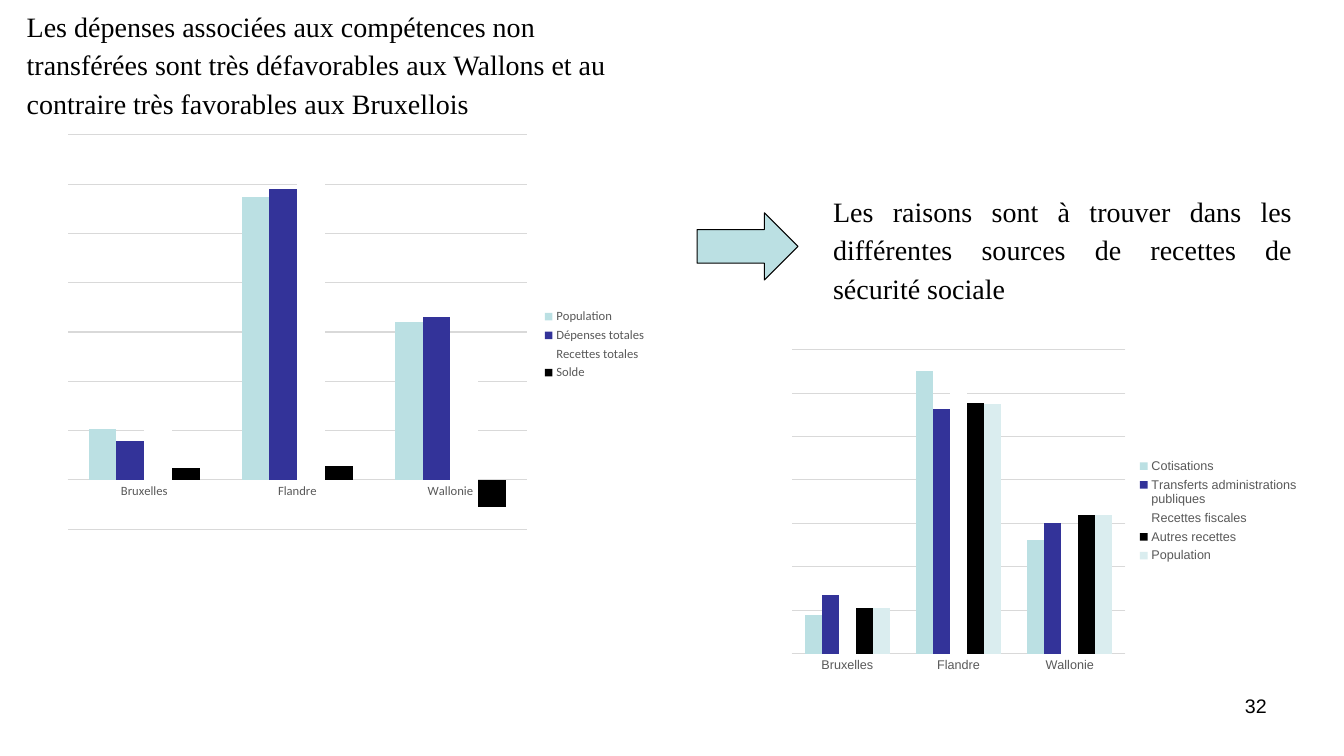
import lxml.etree
import pptx
import pptx.chart.data
import pptx.dml.color
import pptx.enum.chart
import pptx.enum.shapes
import pptx.enum.text
import pptx.oxml
import pptx.oxml.ns
import pptx.util

Pt = pptx.util.Pt
Align = pptx.enum.text.PP_ALIGN

BLACK = "000000"
WHITE = "FFFFFF"
PALE_TEAL = "BBE0E3"
INDIGO = "333399"
LIGHT_TEAL = "DAEDEF"
GRID_GREY = "D9D9D9"
LABEL_GREY = "595959"

REGIONS = ["Bruxelles", "Flandre", "Wallonie"]
BALANCE_SERIES = [
    ("Population", (0.104, 0.574, 0.32), PALE_TEAL),
    ("Dépenses totales", (0.079, 0.591, 0.33), INDIGO),
    ("Recettes totales", (0.103, 0.62, 0.275), WHITE),
    ("Solde", (0.024, 0.029, -0.055), BLACK),
]
REVENUE_SERIES = [
    ("Cotisations", (0.088, 0.65, 0.262), PALE_TEAL),
    ("Transferts administrations publiques", (0.135, 0.564, 0.301), INDIGO),
    ("Recettes fiscales", (0.104, 0.618, 0.274), WHITE),
    ("Autres recettes", (0.105, 0.576, 0.319), BLACK),
    ("Population", (0.104, 0.574, 0.32), LIGHT_TEAL),
]


def color(hex_string):
    return pptx.dml.color.RGBColor.from_string(hex_string)


def style_font(font, name, size, hex_string):
    font.name = name
    font.size = Pt(size)
    font.color.rgb = color(hex_string)


def style_line(line, hex_string):
    line.color.rgb = color(hex_string)
    line.width = Pt(0.75)


def add_text(slide, box, text, font_name, size, alignment):
    shape = slide.shapes.add_textbox(*map(Pt, box))
    shape.text_frame.word_wrap = True
    shape.text_frame.text = text
    paragraph = shape.text_frame.paragraphs[0]
    paragraph.alignment = alignment
    style_font(paragraph.runs[0].font, font_name, size, BLACK)
    return shape


def add_statement(slide, box, text, alignment=Align.LEFT):
    shape = add_text(slide, box, text, "Times New Roman", 20, alignment)
    shape.text_frame.auto_size = pptx.enum.text.MSO_AUTO_SIZE.SHAPE_TO_FIT_TEXT
    paragraph = shape.text_frame.paragraphs[0]
    paragraph.line_spacing = 1.14
    paragraph.space_after = Pt(6)


def add_arrow(slide, box):
    shape = slide.shapes.add_shape(
        pptx.enum.shapes.MSO_SHAPE.RIGHT_ARROW, *map(Pt, box))
    shape.shadow.inherit = False
    shape.fill.solid()
    shape.fill.fore_color.rgb = color(PALE_TEAL)
    style_line(shape.line, BLACK)


def set_plot_area(chart, x, y, width, height):
    """Fix the inner plot area, in fractions of the chart frame."""
    plot_area = chart.plots[0]._element.getparent()
    for layout in plot_area.findall(pptx.oxml.ns.qn("c:layout")):
        plot_area.remove(layout)
    settings = [("layoutTarget", "inner"), ("xMode", "edge"), ("yMode", "edge"),
                ("x", x), ("y", y), ("w", width), ("h", height)]
    layout = pptx.oxml.parse_xml(
        f"<c:layout {pptx.oxml.ns.nsdecls('c')}><c:manualLayout/></c:layout>")
    for tag, value in settings:
        lxml.etree.SubElement(
            layout[0], pptx.oxml.ns.qn(f"c:{tag}"), val=str(value))
    plot_area.insert(0, layout)


def add_column_chart(slide, box, series_rows, font_name, minimum):
    data = pptx.chart.data.CategoryChartData(number_format="0.00%")
    data.categories = REGIONS
    for name, values, _ in series_rows:
        data.add_series(name, values)
    chart = slide.shapes.add_chart(
        pptx.enum.chart.XL_CHART_TYPE.COLUMN_CLUSTERED,
        *map(Pt, box), data).chart
    chart.has_title = False
    style_font(chart.font, font_name, 10, BLACK)

    plot = chart.plots[0]
    plot.gap_width = 150
    plot.overlap = 0
    plot.vary_by_categories = False
    for series, (_, _, fill) in zip(plot.series, series_rows):
        series.invert_if_negative = False
        series.format.fill.solid()
        series.format.fill.fore_color.rgb = color(fill)

    category_axis = chart.category_axis
    category_axis.major_tick_mark = pptx.enum.chart.XL_TICK_MARK.NONE
    style_font(category_axis.tick_labels.font, font_name, 9, LABEL_GREY)
    style_line(category_axis.format.line, GRID_GREY)

    value_axis = chart.value_axis
    value_axis.visible = False
    value_axis.minimum_scale = minimum
    value_axis.maximum_scale = 0.7
    value_axis.major_unit = 0.1
    value_axis.has_major_gridlines = True
    style_line(value_axis.major_gridlines.format.line, GRID_GREY)

    chart.has_legend = True
    chart.legend.position = pptx.enum.chart.XL_LEGEND_POSITION.RIGHT
    chart.legend.include_in_layout = False
    style_font(chart.legend.font, font_name, 9, LABEL_GREY)
    return chart


def main():
    presentation = pptx.Presentation()
    presentation.slide_width = Pt(960)
    presentation.slide_height = Pt(540)
    slide = presentation.slides.add_slide(presentation.slide_layouts[6])

    add_text(slide, (688, 492, 224, 37), "32", "Arial", 14, Align.RIGHT)
    add_statement(
        slide, (12, 0, 468, 88),
        "Les dépenses associées aux compétences non transférées sont très "
        "défavorables aux Wallons et au contraire très favorables aux Bruxellois")
    balance_chart = add_column_chart(
        slide, (48, 96, 421, 300), BALANCE_SERIES, "Calibri", -0.1)
    set_plot_area(balance_chart, 0, 0, 0.78, 0.94)
    add_statement(
        slide, (588, 132, 342, 88),
        "Les raisons sont à trouver dans les différentes sources de recettes "
        "de sécurité sociale", Align.JUSTIFY)
    add_arrow(slide, (498, 152, 72, 48))
    add_column_chart(
        slide, (558, 245, 377, 240), REVENUE_SERIES, "Arial", 0)

    presentation.save("out.pptx")


if __name__ == "__main__":
    main()
